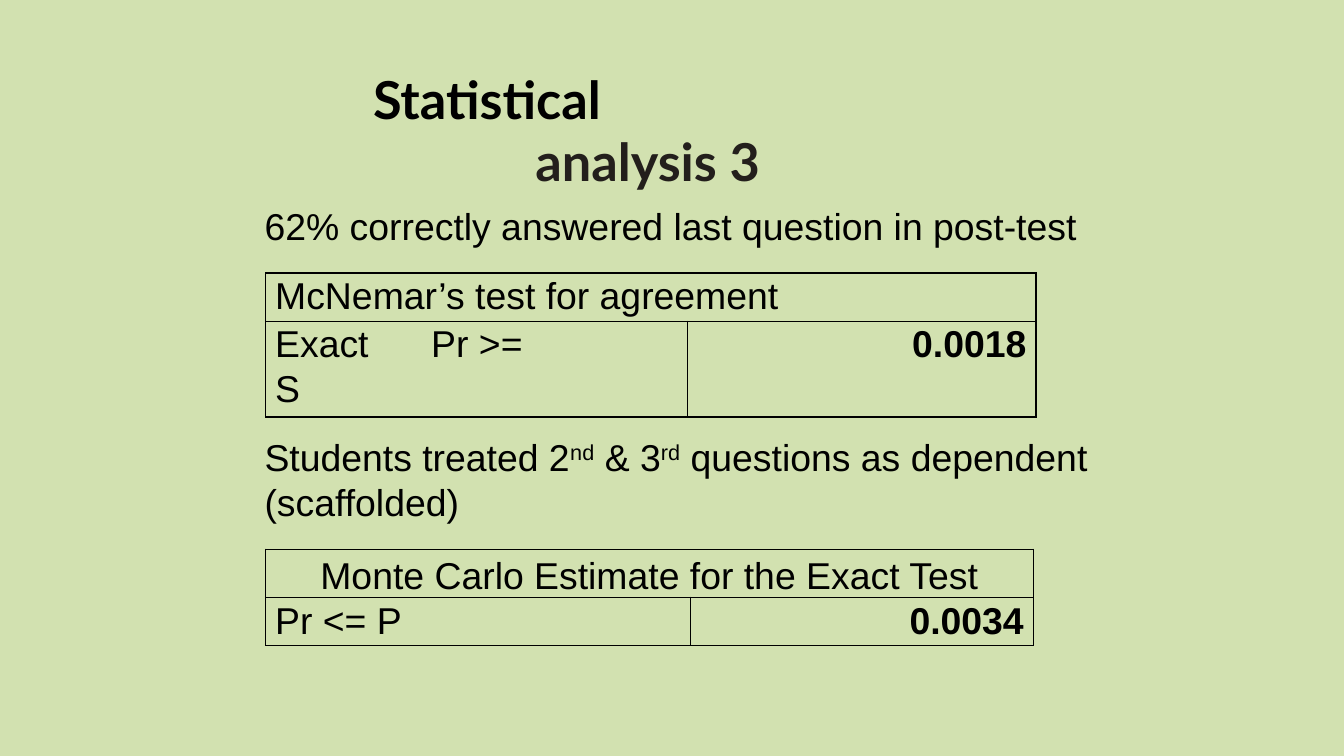
"""Build the slide on statistical analysis with two test tables."""
from dataclasses import dataclass

import lxml.etree
import pptx
import pptx.dml.color
import pptx.enum.text
import pptx.oxml.ns
import pptx.slide
import pptx.table
import pptx.util

Cm = pptx.util.Cm
Pt = pptx.util.Pt
ALIGN = pptx.enum.text.PP_ALIGN
ANCHOR = pptx.enum.text.MSO_ANCHOR
AUTO = pptx.enum.text.MSO_AUTO_SIZE
qn = pptx.oxml.ns.qn
INK = "000000"


@dataclass
class Note:
    top: float
    width: float
    height: float
    words: list[tuple[str, bool]]


@dataclass
class Test:
    top: float
    cols: tuple[float, float]
    rows: tuple[float, float]
    head: str
    label: str
    value: str
    align: ALIGN = ALIGN.LEFT
    anchor: ANCHOR = ANCHOR.TOP


NOTES = [
    Note(3.71, 15.9, 1.12, [("62% correctly answered last question in post-test", False)]),
    Note(8.08, 16.33, 1.96, [
        ("Students treated 2", False), ("nd", True), (" & 3", False),
        ("rd", True), (" questions as dependent (scaffolded)", False)]),
]
TESTS = [
    Test(5.16, (7.97, 6.59), (0.91, 1.81),
         "McNemar’s test for agreement", "Exact\tPr >=\vS", "0.0018"),
    Test(10.38, (8.03, 6.48), (0.91, 0.91),
         "Monte Carlo Estimate for the Exact Test", "Pr <= P", "0.0034",
         ALIGN.CENTER, ANCHOR.BOTTOM),
]


def color(code: str) -> pptx.dml.color.RGBColor:
    return pptx.dml.color.RGBColor.from_string(code)


def write(para, text: str, font="Arial", size=20, ink=INK, bold=False, high=False) -> None:
    for i, line in enumerate(text.split("\v")):
        if i:
            para.add_line_break()
        run = para.add_run()
        run.text = line
        run.font.name = font
        run.font.size = Pt(size)
        run.font.bold = bold
        run.font.color.rgb = color(ink)
        if high:
            run.font._element.set("baseline", "30000")


def add_title(slide: pptx.slide.Slide) -> None:
    title = slide.shapes.title
    title.left, title.top = Cm(6.48), Cm(0.94)
    title.width, title.height = Cm(11.2), Cm(3.02)
    frame = title.text_frame
    frame.auto_size = AUTO.NONE
    frame.vertical_anchor = ANCHOR.MIDDLE
    frame.margin_left = frame.margin_right = Cm(0.25)
    frame.margin_top = frame.margin_bottom = Cm(0.25)
    first, last = frame.paragraphs[0], frame.add_paragraph()
    first.alignment, last.alignment = ALIGN.LEFT, ALIGN.CENTER
    first._p.get_or_add_pPr().set("marL", str(Cm(0.32)))
    write(first, "Statistical", font="Lato", size=28, bold=True)
    write(last, "analysis 3", font="Lato", size=28, ink="231F1C", bold=True)


def add_note(slide: pptx.slide.Slide, note: Note) -> None:
    box = slide.shapes.add_textbox(Cm(4.75), Cm(note.top), Cm(note.width), Cm(note.height))
    frame = box.text_frame
    frame.word_wrap = True
    frame.auto_size = AUTO.SHAPE_TO_FIT_TEXT
    for text, high in note.words:
        write(frame.paragraphs[0], text, high=high)


def set_edges(cell: pptx.table._Cell) -> None:
    props = cell._tc.get_or_add_tcPr()
    for side in ("lnL", "lnR", "lnT", "lnB"):
        line = lxml.etree.SubElement(props, qn(f"a:{side}"), w=str(Pt(0.75)))
        fill = lxml.etree.SubElement(line, qn("a:solidFill"))
        lxml.etree.SubElement(fill, qn("a:srgbClr"), val=INK)


def fill_cell(cell: pptx.table._Cell, text: str, align=ALIGN.LEFT,
              anchor=ANCHOR.TOP, bold=False) -> None:
    cell.margin_left = cell.margin_right = Cm(0.18)
    cell.margin_top = cell.margin_bottom = 0
    cell.vertical_anchor = anchor
    para = cell.text_frame.paragraphs[0]
    para.alignment = align
    para.line_spacing = 1.07
    if "\t" in text:
        tabs = lxml.etree.SubElement(para._p.get_or_add_pPr(), qn("a:tabLst"))
        lxml.etree.SubElement(tabs, qn("a:tab"), pos=str(Cm(2.95)), algn="l")
    write(para, text, bold=bold)


def add_test(slide: pptx.slide.Slide, test: Test) -> None:
    frame = slide.shapes.add_table(2, 2, Cm(5.02), Cm(test.top),
                                   Cm(sum(test.cols)), Cm(sum(test.rows)))
    table = frame.table
    table.first_row = table.horz_banding = False
    for col, width in zip(table.columns, test.cols):
        col.width = Cm(width)
    for row, height in zip(table.rows, test.rows):
        row.height = Cm(height)
    for cell in table.iter_cells():
        set_edges(cell)
        cell.fill.background()
    table.cell(0, 0).merge(table.cell(0, 1))
    fill_cell(table.cell(0, 0), test.head, test.align, test.anchor)
    fill_cell(table.cell(1, 0), test.label)
    fill_cell(table.cell(1, 1), test.value, ALIGN.RIGHT, bold=True)


def main() -> None:
    deck = pptx.Presentation()
    deck.slide_width, deck.slide_height = Cm(25.4), Cm(14.29)
    slide = deck.slides.add_slide(deck.slide_layouts[5])
    slide.background.fill.solid()
    slide.background.fill.fore_color.rgb = color("D2E1B0")
    add_title(slide)
    for note in NOTES:
        add_note(slide, note)
    for test in TESTS:
        add_test(slide, test)
    deck.save("out.pptx")


if __name__ == "__main__":
    main()
